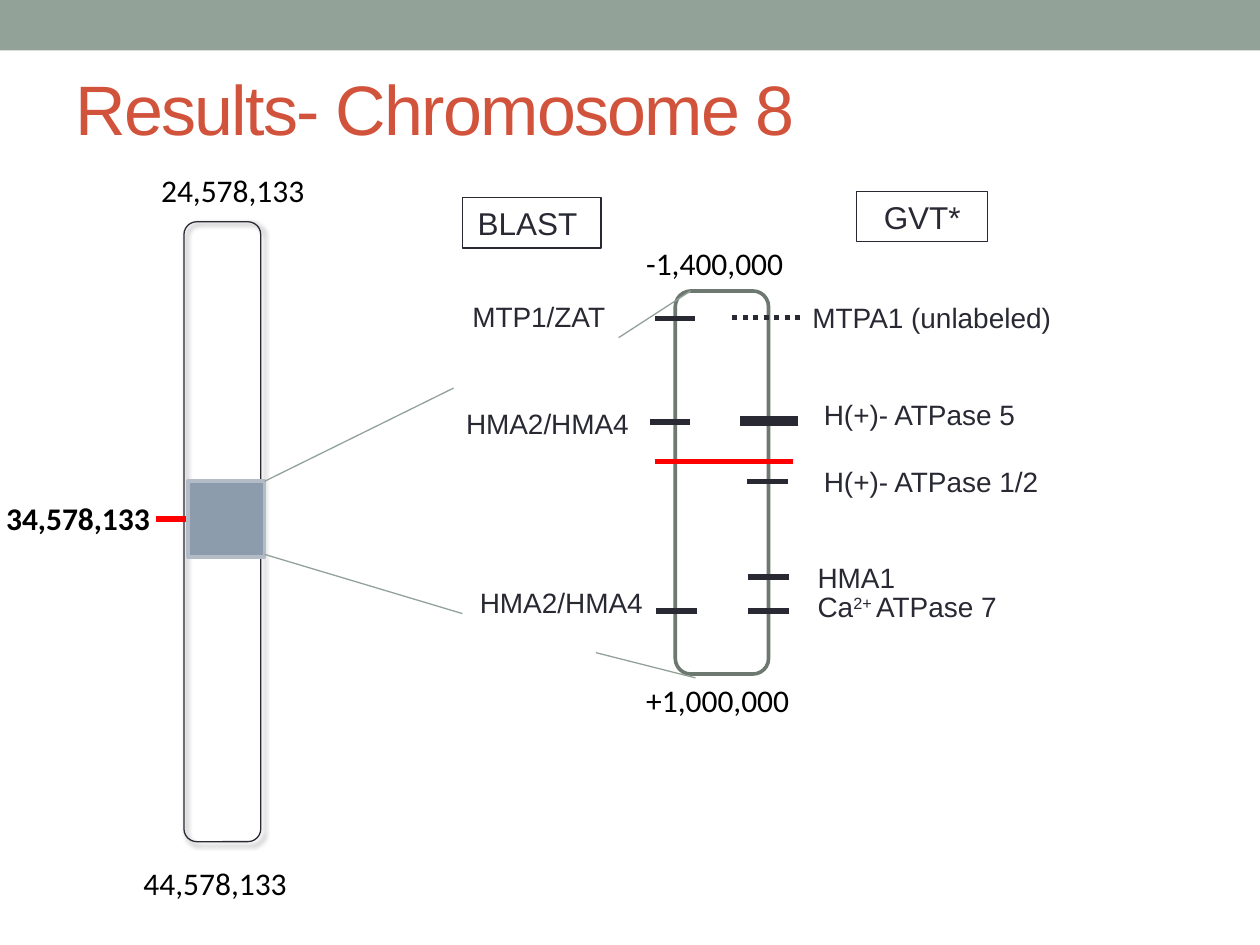
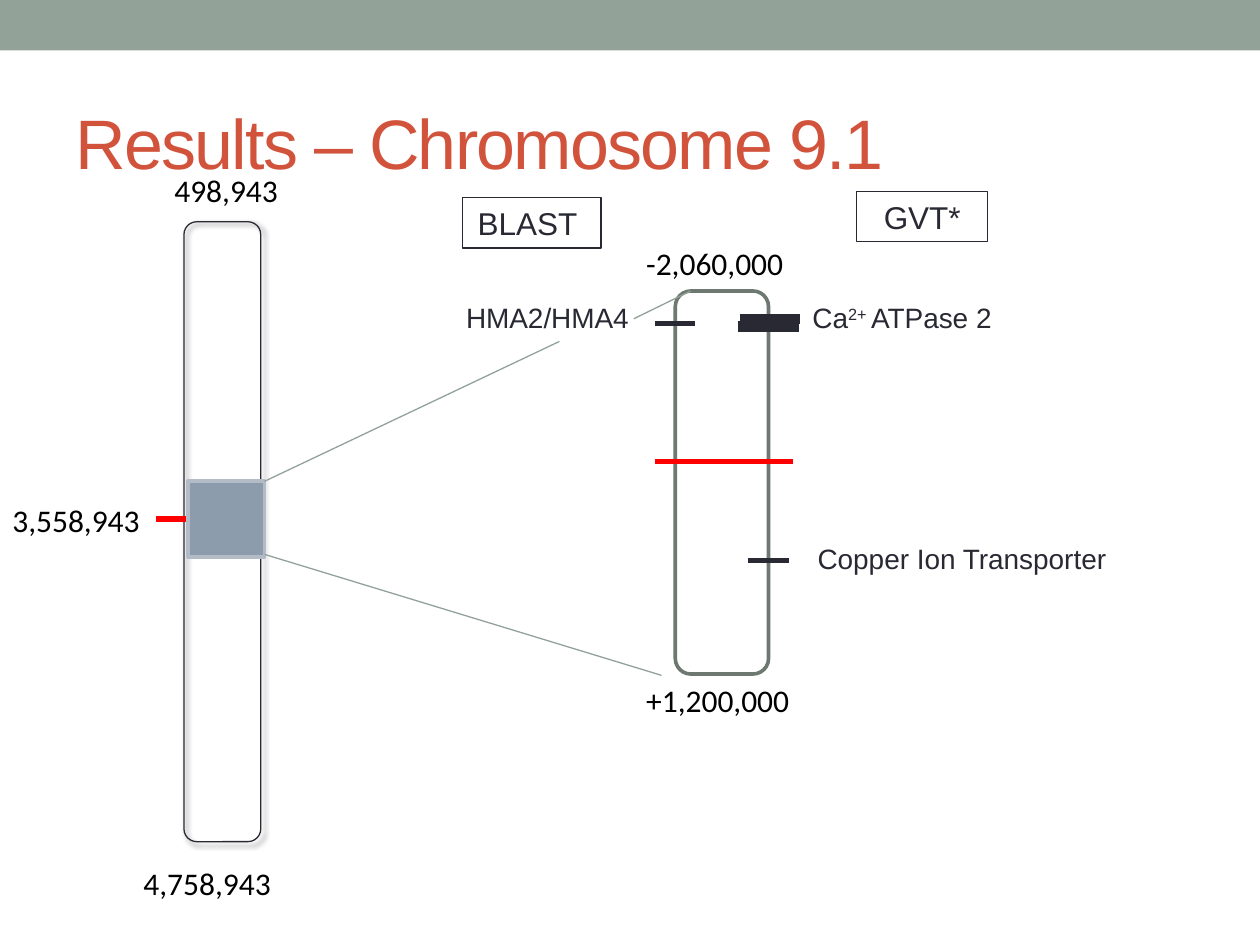
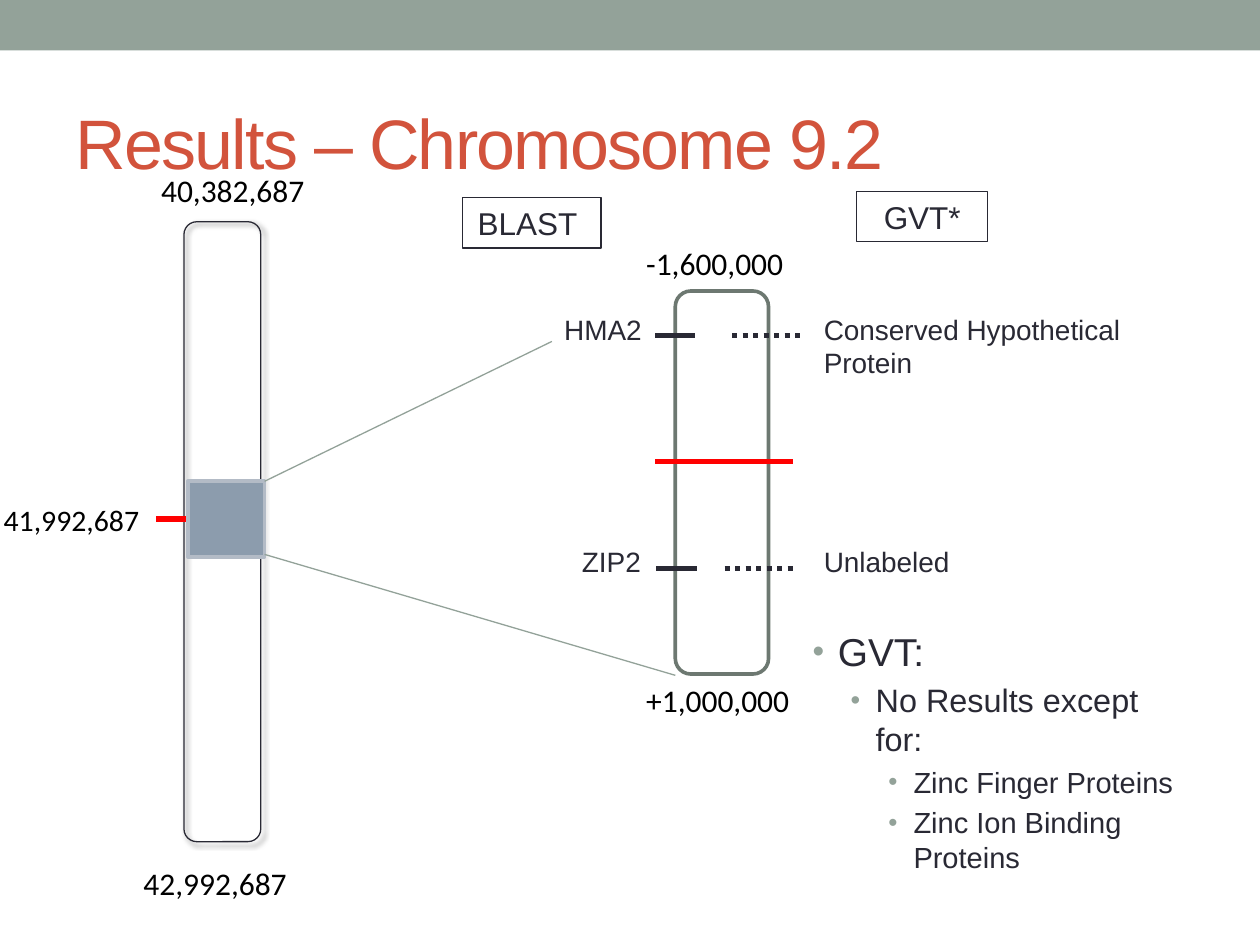
from dataclasses import dataclass
from typing import NamedTuple

from lxml import etree
from pptx import Presentation
from pptx.dml.color import RGBColor
from pptx.enum.dml import MSO_LINE
from pptx.enum.shapes import MSO_CONNECTOR, MSO_SHAPE
from pptx.enum.text import MSO_ANCHOR, MSO_AUTO_SIZE, PP_ALIGN
from pptx.oxml.ns import qn
from pptx.util import Emu, Pt

STRAIGHT = MSO_CONNECTOR.STRAIGHT
RECT, ROUND_RECT = MSO_SHAPE.RECTANGLE, MSO_SHAPE.ROUNDED_RECTANGLE
LEFT, CENTER = PP_ALIGN.LEFT, PP_ALIGN.CENTER
TOP, MIDDLE = MSO_ANCHOR.TOP, MSO_ANCHOR.MIDDLE
DOTTED = MSO_LINE.ROUND_DOT
NO_FIT = MSO_AUTO_SIZE.NONE

EMU_PER_PX = 9144  # 100 px to the inch
SAGE, RUST, INK = "93A299", "D2533C", "292934"
RED, BLACK, WHITE = "FF0000", "000000", "FFFFFF"
SLATE, SLATE_EDGE, WINDOW_EDGE = "8C9CAD", "B3BBC6", "6D7871"
TITLE_ONLY, TITLE_AND_BODY = 5, 1
RIGHT_SIDE = 3


class Area(NamedTuple):
    left: int
    top: int
    width: int
    height: int


class Style(NamedTuple):
    font: str
    size: float
    color: str
    bold: bool = False
    align: PP_ALIGN = LEFT


class Label(NamedTuple):
    """Text in a box; parts between bars are superscript."""
    text: str
    area: Area
    style: Style


class Line(NamedTuple):
    x1: int
    y1: int
    x2: int
    y2: int
    color: str
    weight: float
    dotted: bool = False


class Bullet(NamedTuple):
    text: str
    level: int
    size: float
    marker_percent: int


@dataclass
class ChromosomePage:
    title: str
    title_top: int
    positions: list[Label]
    genes: list[Label]
    marks: list[Line]
    zooms: list[Line]
    bullets: tuple[Bullet, ...] = ()


TITLE = Style("Arial", 40, RUST)
HEADER = Style("Arial", 18, INK, align=CENTER)
GENE = Style("Arial", 16, INK)
POSITION = Style("Calibri", 18, BLACK)

CHROMOSOME = Area(146, 176, 61, 492)
WINDOW = Area(536, 231, 74, 304)
REGION = Area(149, 382, 61, 60)
REGION_RIGHT, REGION_MIDDLE = 210, 412
LOCUS_TICK = Line(124, REGION_MIDDLE, REGION_RIGHT, REGION_MIDDLE, RED, 3)
LOCUS_LINE = Line(520, 366, 629, 366, RED, 3)
HEADERS = (Label("GVT*", Area(680, 152, 104, 40), HEADER),
           Label("BLAST ", Area(367, 157, 110, 40), HEADER))


# Data helpers
def gene(text: str, left: int, top: int, width: int, height: int = 37) -> Label:
    return Label(text, Area(left, top, width, height), GENE)


def mark(left: int, y: int, width: int = 32, weight: float = 3, dotted: bool = False) -> Line:
    return Line(left, y, left + width, y, INK, weight, dotted)


def dots(left: int, y: int) -> Line:
    return mark(left, y, 58, dotted=True)


def zoom(x1: int, y1: int, x2: int, y2: int) -> Line:
    return Line(x1, y1, x2, y2, SAGE, 0.75)


def positions(start: str, end: str, before: str, after: str, locus: Label,
              start_left: int = 118, align: PP_ALIGN = LEFT) -> list[Label]:
    return [
        Label(start, Area(start_left, 131, 145, 40), POSITION._replace(align=align)),
        Label(end, Area(104, 681, 145, 40), POSITION),
        Label(before, Area(503, 189, 141, 40), POSITION),
        Label(after, Area(503, 536, 141, 40), POSITION),
        locus,
    ]


PAGES = (
    ChromosomePage(
        "Results- Chromosome 8", 31,
        positions("24,578,133", "44,578,133", "-1,400,000", "+1,000,000",
                  Label("34,578,133", Area(-8, 391, 140, 67),
                        POSITION._replace(bold=True, align=CENTER))),
        [gene("MTP1/ZAT", 365, 233, 155),
         gene("HMA2/HMA4", 360, 318, 165),
         gene("HMA2/HMA4", 371, 460, 165),
         gene("MTPA1 (unlabeled)", 635, 234, 256),
         gene("H(+)- ATPase 5", 644, 311, 239),
         gene("H(+)- ATPase 1/2", 644, 364, 239),
         gene("HMA1", 639, 440, 165),
         gene("Ca|2+ |ATPase 7", 639, 463, 165)],
        [mark(520, 253), mark(516, 335), mark(521, 485),
         dots(581, 252), mark(587, 334, 46, 6), mark(593, 382),
         mark(594, 458), mark(594, 485)],
        [zoom(REGION_RIGHT, 440, 367, 487), zoom(REGION_RIGHT, 382, 360, 308),
         zoom(473, 518, 552, 538), zoom(491, 268, 548, 231)],
    ),
    ChromosomePage(
        "Results – Chromosome 9.1", 58,
        positions("498,943", "4,758,943", "-2,060,000", "+1,200,000",
                  Label("3,558,943", Area(0, 393, 134, 40), POSITION), 107, CENTER),
        [gene("HMA2/HMA4", 360, 234, 165),
         gene("Ca|2+ |ATPase 2", 635, 234, 256),
         gene("Copper Ion Transporter", 639, 425, 252)],
        [mark(520, 257), mark(587, 253, 48, 6), mark(586, 259, 48, 6), mark(594, 445)],
        [zoom(REGION_RIGHT, 440, 525, 536), zoom(REGION_RIGHT, 382, 444, 271),
         zoom(503, 253, 548, 231)],
    ),
    ChromosomePage(
        "Results – Chromosome 9.2", 58,
        positions("40,382,687", "42,992,687", "-1,600,000", "+1,000,000",
                  Label("41,992,687", Area(-7, 393, 145, 39), POSITION._replace(size=17))),
        [gene("HMA2", 438, 243, 87),
         gene("ZIP2", 452, 427, 71),
         gene("Conserved Hypothetical Protein", 644, 243, 256, 64),
         gene("Unlabeled", 644, 427, 256)],
        [mark(520, 266), mark(521, 451), dots(581, 266), dots(575, 451)],
        [zoom(REGION_RIGHT, 440, 536, 536), zoom(REGION_RIGHT, 382, 438, 271)],
        (Bullet("GVT:", 0, 22.2, 85),
         Bullet("No Results except for:", 1, 18.5, 85),
         Bullet("Zinc Finger Proteins", 2, 16.6, 90),
         Bullet("Zinc Ion Binding Proteins", 2, 16.6, 90)),
    ),
)


# Drawing helpers
def px(length: int) -> Emu:
    return Emu(length * EMU_PER_PX)


def box_of(area: Area) -> list[Emu]:
    return [px(length) for length in area]


def rgb(color: str) -> RGBColor:
    return RGBColor.from_string(color)


def place(shape, area: Area) -> None:
    shape.left, shape.top, shape.width, shape.height = box_of(area)


def format_span(span, style: Style) -> None:
    span.font.name = style.font
    span.font.size = Pt(style.size)
    span.font.bold = style.bold
    span.font.color.rgb = rgb(style.color)


def write(frame, text: str, style: Style, anchor: MSO_ANCHOR = TOP) -> None:
    frame.word_wrap = True
    frame.auto_size = NO_FIT
    frame.vertical_anchor = anchor
    para = frame.paragraphs[0]
    para.alignment = style.align
    for index, part in enumerate(text.split("|")):
        span = para.add_run()
        span.text = part
        format_span(span, style)
        if index % 2:
            span.font._element.set("baseline", "30000")


def add_label(page, label: Label) -> None:
    box = page.shapes.add_textbox(*box_of(label.area))
    write(box.text_frame, label.text, label.style)


def add_box(page, kind: MSO_SHAPE, area: Area, fill: str | None = None,
            edge: str | None = None, weight: float = 0.75):
    shape = page.shapes.add_shape(kind, *box_of(area))
    shape.shadow.inherit = False
    if fill:
        shape.fill.solid()
        shape.fill.fore_color.rgb = rgb(fill)
    else:
        shape.fill.background()
    if edge:
        shape.line.color.rgb = rgb(edge)
        shape.line.width = Pt(weight)
    else:
        shape.line.fill.background()
    return shape


def add_line(page, line: Line):
    connector = page.shapes.add_connector(
        STRAIGHT, px(line.x1), px(line.y1), px(line.x2), px(line.y2))
    connector.line.color.rgb = rgb(line.color)
    connector.line.width = Pt(line.weight)
    if line.dotted:
        connector.line.dash_style = DOTTED
    etree.SubElement(connector._element.spPr, qn("a:effectLst"))
    return connector


def add_shadow(shape) -> None:
    effects = shape._element.spPr.find(qn("a:effectLst"))
    shadow = etree.SubElement(effects, qn("a:outerShdw"), blurRad=str(Pt(3)),
                              dist=str(Pt(2)), dir=str(45 * 60000), rotWithShape="0")
    color = etree.SubElement(shadow, qn("a:srgbClr"), val=BLACK)
    etree.SubElement(color, qn("a:alpha"), val="60000")


# Parts of a page
def add_title(page, text: str, top: int) -> None:
    title = page.shapes.title
    place(title, Area(50, top, 900, 108))
    write(title.text_frame, text, TITLE, MIDDLE)
    for span in title.text_frame.paragraphs[0].runs:
        span.font._element.set("spc", "-100")


def add_bullets(page, bullets: tuple[Bullet, ...]) -> None:
    body = page.placeholders[1]
    place(body, Area(635, 493, 315, 228))
    frame = body.text_frame
    frame.auto_size = NO_FIT
    frame.text = "\n".join(bullet.text for bullet in bullets)
    for para, bullet in zip(frame.paragraphs, bullets):
        para.level = bullet.level
        format_span(para.runs[0], Style("Arial", bullet.size, INK))
        properties = para._p.get_or_add_pPr()
        properties.set("marL", str(px(20 + 30 * bullet.level)))
        properties.set("indent", str(px(-20)))
        color = etree.SubElement(properties, qn("a:buClr"))
        etree.SubElement(color, qn("a:srgbClr"), val=SAGE)
        etree.SubElement(properties, qn("a:buSzPct"), val=str(bullet.marker_percent * 1000))
        etree.SubElement(properties, qn("a:buFont"), typeface="Arial")
        etree.SubElement(properties, qn("a:buChar"), char="•")


def add_chromosome(page) -> None:
    add_shadow(add_box(page, ROUND_RECT, CHROMOSOME, edge=INK))
    tick = add_line(page, LOCUS_TICK)
    add_box(page, ROUND_RECT, WINDOW, WHITE, WINDOW_EDGE, 2.08)
    region = add_box(page, RECT, REGION, SLATE, SLATE_EDGE, 2.08)
    tick.end_connect(region, RIGHT_SIDE)
    for header in HEADERS:
        box = add_box(page, RECT, header.area, edge=INK)
        write(box.text_frame, header.text, header.style)
    add_line(page, LOCUS_LINE)


def add_page(deck, content: ChromosomePage):
    layout = TITLE_AND_BODY if content.bullets else TITLE_ONLY
    page = deck.slides.add_slide(deck.slide_layouts[layout])
    add_title(page, content.title, content.title_top)
    if content.bullets:
        add_bullets(page, content.bullets)
    add_chromosome(page)
    for line in content.marks + content.zooms:
        add_line(page, line)
    for label in content.positions + content.genes:
        add_label(page, label)
    return page


def move_band_to_master(deck, page) -> None:
    band = add_box(page, RECT, Area(0, 0, 1000, 40), SAGE)
    deck.slide_master.shapes.element.insert(2, band._element)


def main() -> None:
    deck = Presentation()
    deck.slide_width, deck.slide_height = px(1000), px(750)
    pages = [add_page(deck, content) for content in PAGES]
    move_band_to_master(deck, pages[0])
    deck.save("out.pptx")


if __name__ == "__main__":
    main()
